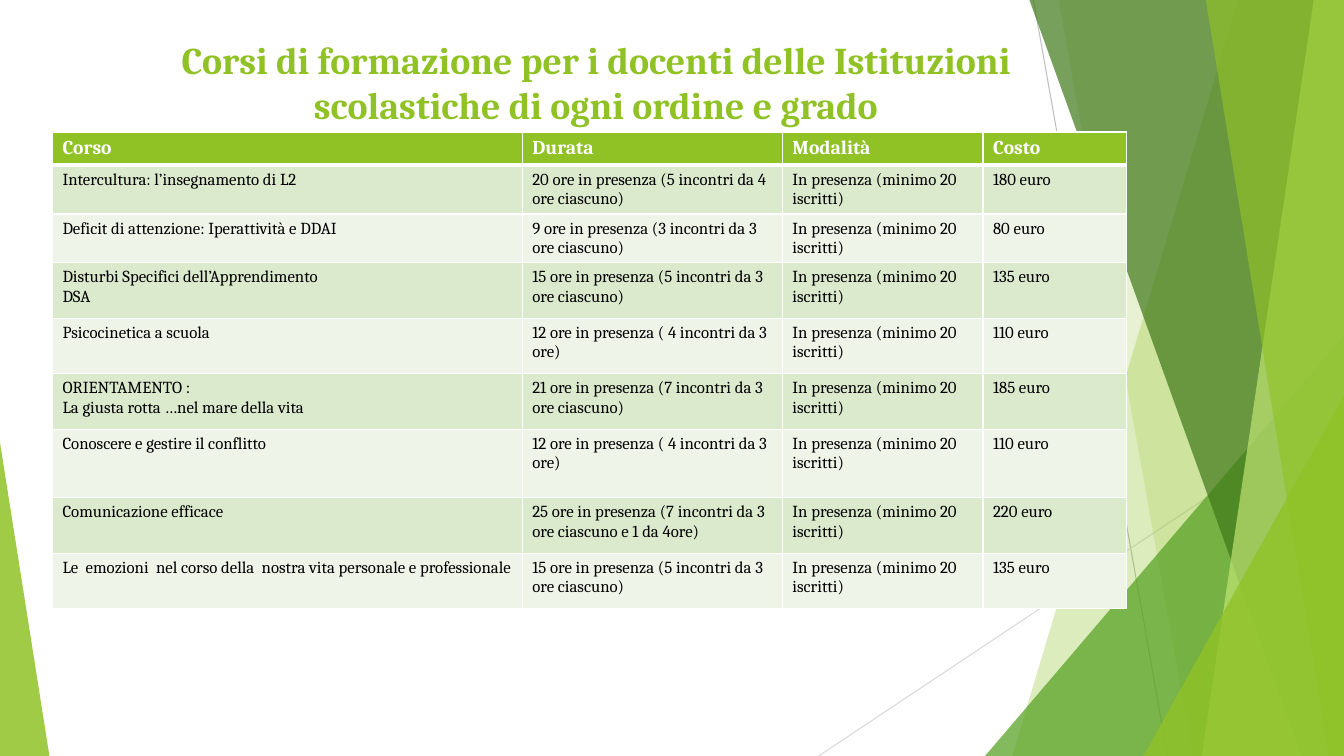
import lxml.etree
import pptx
import pptx.dml.color
import pptx.enum.shapes
import pptx.enum.text
import pptx.oxml
import pptx.oxml.ns
import pptx.util
from pptx.util import Inches

GREEN, WHITE, BLACK = "90C226", "FFFFFF", "000000"
BANDS = ("DBE9CD", "EEF4E8")
WIDTH, HEIGHT = 13.33, 7.5

HEADINGS = ("Corso", "Durata", "Modalità", "Costo")
MODE = "In presenza (minimo 20 iscritti)"
COURSES = (
    ("Intercultura: l’insegnamento di L2",
     "20 ore in presenza (5 incontri da 4 ore ciascuno)", 180),
    ("Deficit di attenzione: Iperattività e DDAI",
     "9 ore in presenza (3 incontri da 3 ore ciascuno)", 80),
    ("Disturbi Specifici dell’Apprendimento\nDSA",
     "15 ore in presenza (5 incontri da 3 ore ciascuno)", 135),
    ("Psicocinetica a scuola",
     "12 ore in presenza ( 4 incontri da 3 ore)", 110),
    ("ORIENTAMENTO :\nLa giusta rotta …nel mare della vita",
     "21 ore in presenza (7 incontri da 3 ore ciascuno)", 185),
    ("Conoscere e gestire il conflitto",
     "12 ore in presenza ( 4 incontri da 3 ore)", 110),
    ("Comunicazione efficace",
     "25 ore in presenza (7 incontri da 3 ore ciascuno e 1 da 4ore)", 220),
    ("Le  emozioni  nel corso della  nostra vita personale e professionale",
     "15 ore in presenza (5 incontri da 3 ore ciascuno)", 135),
)
COLUMN_WIDTHS = (4.66, 2.58, 1.99, 1.42)
ROW_HEIGHTS = (0.33, 0.48, 0.48, 0.55, 0.55, 0.55, 0.68, 0.55, 0.55)

# Top left and bottom left x, colour, opacity in percent
BACK_PANELS = ((12.28, 10.04, GREEN, 30), (10.5, 11.83, GREEN, 20))
FRONT_PANELS = ((10.21, 12.91, "3F7819", 70), (13.03, 11.92, "C0E474", 70),
                (11.96, 13.18, GREEN, 65))


def rgb(color):
    return pptx.dml.color.RGBColor.from_string(color)


class SlideBuilder:
    font = "Cambria"

    def __init__(self, presentation):
        self.slide = presentation.slides.add_slide(presentation.slide_layouts[5])
        self.shapes = self.slide.shapes

    def format_text(self, frame, size, color, bold):
        for paragraph in frame.paragraphs:
            font = paragraph.font
            font.name = self.font
            font.size = pptx.util.Pt(size)
            font.bold = bold
            font.color.rgb = rgb(color)

    def paint(self, shape, color, opacity):
        """Give the shape a see-through fill without outline or shadow."""
        shape.shadow.inherit = False
        shape.line.fill.background()
        shape.fill.solid()
        shape.fill.fore_color.rgb = rgb(color)
        tint = shape.element.spPr.find(".//" + pptx.oxml.ns.qn("a:srgbClr"))
        alpha = lxml.etree.SubElement(tint, pptx.oxml.ns.qn("a:alpha"))
        alpha.set("val", str(opacity * 1000))

    def line(self, start, end, color):
        connector = self.shapes.add_connector(
            pptx.enum.shapes.MSO_CONNECTOR.STRAIGHT,
            *(Inches(value) for value in start + end))
        connector.line.color.rgb = rgb(color)
        connector.line.width = pptx.util.Pt(0.75)
        lxml.etree.SubElement(connector.element.spPr,
                              pptx.oxml.ns.qn("a:effectLst"))

    def panel(self, top_x, bottom_x, color, opacity):
        """Fill the slide from a slanted left edge to its right side."""
        builder = self.shapes.build_freeform(Inches(top_x), 0)
        corners = ((WIDTH, 0), (WIDTH, HEIGHT), (bottom_x, HEIGHT))
        builder.add_line_segments(
            [(Inches(x), Inches(y)) for x, y in corners], close=True)
        self.paint(builder.convert_to_shape(), color, opacity)

    def triangle(self, left, top, width, apex, color, opacity):
        """Draw a triangle that stands on the bottom of the slide."""
        shape = self.shapes.add_shape(
            pptx.enum.shapes.MSO_SHAPE.ISOSCELES_TRIANGLE, Inches(left),
            Inches(top), Inches(width), Inches(HEIGHT - top))
        shape.adjustments[0] = apex
        self.paint(shape, color, opacity)

    def title(self, text, left, top, width, height):
        """Fill the title placeholder and bring it to the front."""
        title = self.shapes.title
        self.shapes[-1].element.addnext(title.element)
        title.left, title.top = Inches(left), Inches(top)
        title.width, title.height = Inches(width), Inches(height)
        frame = title.text_frame
        frame.text = text
        frame.word_wrap = True
        frame.auto_size = pptx.enum.text.MSO_AUTO_SIZE.NONE
        frame.vertical_anchor = pptx.enum.text.MSO_ANCHOR.TOP
        frame.paragraphs[0].alignment = pptx.enum.text.PP_ALIGN.CENTER
        self.format_text(frame, 27, GREEN, True)

    def borders(self, cell, widths):
        """Draw white borders; widths maps each side (L, R, T, B) to points."""
        properties = cell._tc.get_or_add_tcPr()
        for side, width in widths.items():
            properties.append(pptx.oxml.parse_xml(
                f'<a:ln{side} {pptx.oxml.ns.nsdecls("a")} '
                f'w="{pptx.util.Pt(width)}"><a:solidFill>'
                f'<a:srgbClr val="{WHITE}"/></a:solidFill></a:ln{side}>'))

    def table(self, rows, left, top, column_widths, row_heights):
        table = self.shapes.add_table(
            len(rows), len(column_widths), Inches(left), Inches(top),
            Inches(sum(column_widths)), Inches(sum(row_heights))).table
        for column, width in zip(table.columns, column_widths):
            column.width = Inches(width)
        for row, height in zip(table.rows, row_heights):
            row.height = Inches(height)
        for row_index, texts in enumerate(rows):
            header = row_index == 0
            fill = GREEN if header else BANDS[(row_index - 1) % 2]
            for column_index, text in enumerate(texts):
                cell = table.cell(row_index, column_index)
                cell.text = text
                self.format_text(cell.text_frame, 14 if header else 12,
                                 WHITE if header else BLACK, header)
                self.borders(cell, {"L": 1, "R": 1,
                                    "T": 3 if row_index == 1 else 1,
                                    "B": 3 if header else 1})
                cell.fill.solid()
                cell.fill.fore_color.rgb = rgb(fill)


def main():
    presentation = pptx.Presentation()
    presentation.slide_width = Inches(WIDTH)
    presentation.slide_height = Inches(HEIGHT)
    builder = SlideBuilder(presentation)

    builder.line((10.25, 0), (11.58, HEIGHT), "BFBFBF")
    builder.line((WIDTH, 4.03), (8.12, HEIGHT), "D9D9D9")
    for panel in BACK_PANELS:
        builder.panel(*panel)
    builder.triangle(9.77, 3.33, 3.56, 1, "54A021", 72)
    for panel in FRONT_PANELS:
        builder.panel(*panel)
    builder.triangle(11.34, 3.93, 1.99, 1, GREEN, 80)
    builder.triangle(0, 4.39, 0.49, 0, GREEN, 85)

    builder.title("Corsi di formazione per i docenti delle Istituzioni "
                  "scolastiche di ogni ordine e grado", 1.33, 0.31, 9.16, 1.25)
    rows = [HEADINGS] + [(course, duration, MODE, f"{cost} euro")
                         for course, duration, cost in COURSES]
    builder.table(rows, 0.52, 1.31, COLUMN_WIDTHS, ROW_HEIGHTS)
    presentation.save("out.pptx")


if __name__ == "__main__":
    main()
